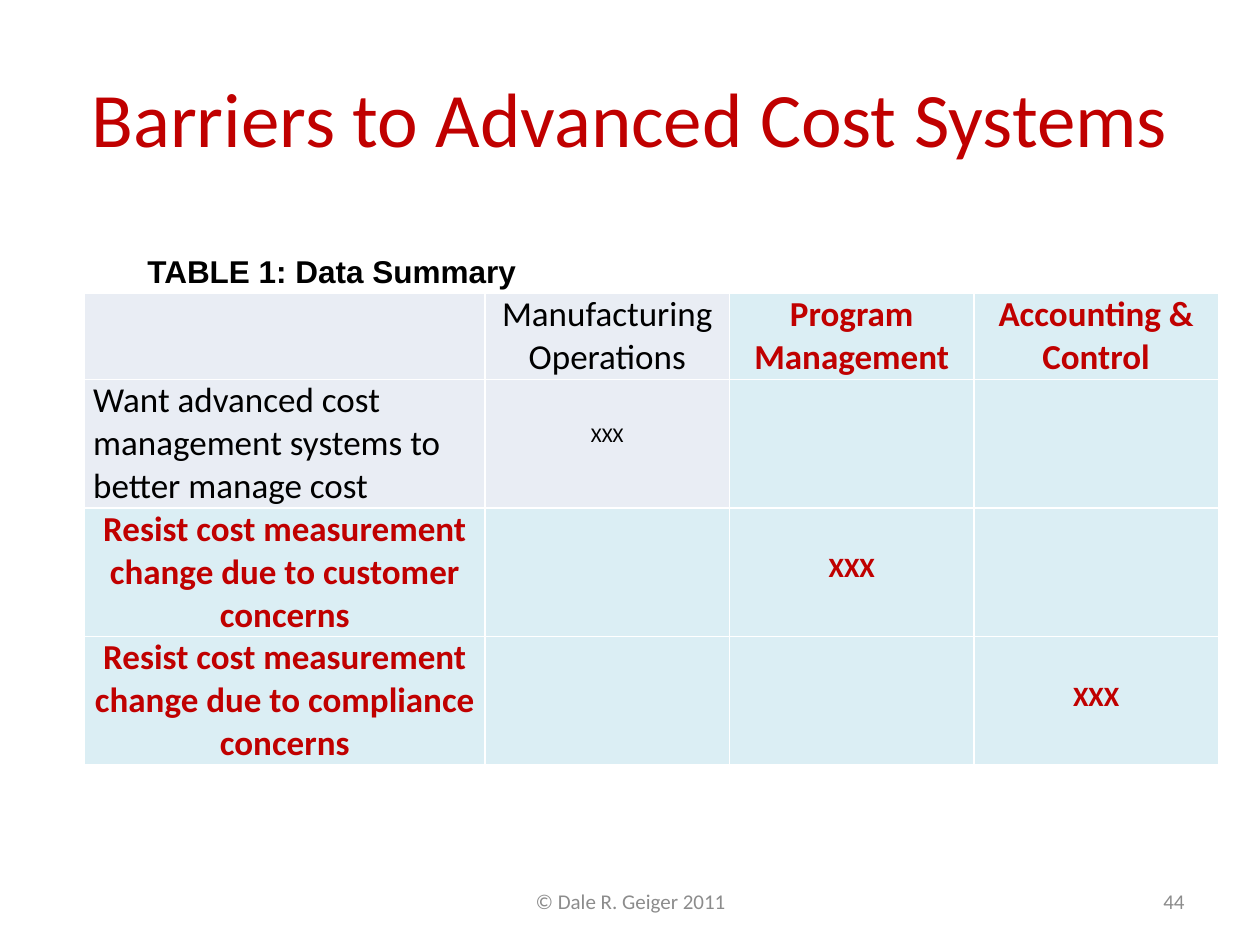
from dataclasses import dataclass

from lxml import etree
from pptx import Presentation
from pptx.dml.color import RGBColor
from pptx.enum.text import MSO_ANCHOR, PP_ALIGN
from pptx.oxml.ns import qn
from pptx.util import Inches, Pt

LEFT, CENTER, RIGHT = PP_ALIGN.LEFT, PP_ALIGN.CENTER, PP_ALIGN.RIGHT
TOP, MIDDLE = MSO_ANCHOR.TOP, MSO_ANCHOR.MIDDLE
RED, BLACK, GRAY, WHITE = "C00000", "000000", "8C8C8C", "FFFFFF"
LAVENDER, AQUA = "E9EDF4", "DBEEF4"
TITLE_ONLY = 5

LINE_HEIGHT = 0.34  # one 20 pt line, in inches
COLUMN_WIDTHS = [3.18] + 3 * [1.94]
ROW_LINES = [2, 3, 3, 3]


@dataclass(frozen=True)
class Style:
    size: float
    color: str = BLACK
    bold: bool = False
    align: PP_ALIGN = CENTER
    font: str = "Calibri"


@dataclass(frozen=True)
class Entry:
    row: int
    column: int
    text: str
    style: Style
    lines_above: int = 0


@dataclass(frozen=True)
class Label:
    text: str
    left: float
    top: float
    width: float
    height: float
    style: Style
    anchor: MSO_ANCHOR = MIDDLE
    margins: tuple[float, float] = (0.1, 0.05)
    wrap: bool = True


PLAIN = Style(20)
STRONG = Style(20, RED, bold=True)
MARK = Style(16, RED, bold=True)

ENTRIES = [
    Entry(0, 1, "Manufacturing Operations", PLAIN),
    Entry(0, 2, "Program Management", STRONG),
    Entry(0, 3, "Accounting & Control", STRONG),
    Entry(1, 0, "Want advanced cost management systems to better manage cost",
          Style(20, align=LEFT)),
    Entry(1, 1, "XXX", Style(12), lines_above=1),
    Entry(2, 0, "Resist cost measurement change due to customer concerns", STRONG),
    Entry(2, 2, "XXX", MARK, lines_above=1),
    Entry(3, 0, "Resist cost measurement change due to compliance concerns", STRONG),
    Entry(3, 3, "XXX", MARK, lines_above=1),
]

LABELS = [
    Label("TABLE 1: Data Summary", 1.17, 1.98, 2.95, 0.71,
          Style(18, bold=True, align=LEFT, font="Arial"), TOP, (0, 0.02), wrap=False),
    Label("© Dale R. Geiger 2011", 3.42, 6.95, 3.17, 0.4, Style(12, GRAY)),
    Label("44", 7.17, 6.95, 2.33, 0.4, Style(12, GRAY, align=RIGHT)),
]


def rgb(color: str) -> RGBColor:
    return RGBColor.from_string(color)


def write(text_frame, text: str, style: Style) -> None:
    paragraph = text_frame.paragraphs[0]
    paragraph.text = text
    paragraph.alignment = style.align
    font = paragraph.font
    font.name, font.size, font.bold = style.font, Pt(style.size), style.bold
    font.color.rgb = rgb(style.color)


def add_title(slide, text: str) -> None:
    title = slide.shapes.title
    title.left, title.top = Inches(0.5), Inches(0.3)
    title.width, title.height = Inches(9), Inches(1.25)
    title.text_frame.vertical_anchor = MIDDLE
    write(title.text_frame, text, Style(44, RED))


def add_label(slide, label: Label) -> None:
    box = slide.shapes.add_textbox(Inches(label.left), Inches(label.top),
                                   Inches(label.width), Inches(label.height))
    frame = box.text_frame
    frame.word_wrap = label.wrap
    frame.vertical_anchor = label.anchor
    side, end = (Inches(margin) for margin in label.margins)
    frame.margin_left = frame.margin_right = side
    frame.margin_top = frame.margin_bottom = end
    write(frame, label.text, label.style)


def add_borders(cell, color: str) -> None:
    properties = cell._tc.get_or_add_tcPr()
    for edge in ("a:lnL", "a:lnR", "a:lnT", "a:lnB"):
        line = etree.SubElement(properties, qn(edge), w=str(Pt(1)))
        fill = etree.SubElement(line, qn("a:solidFill"))
        etree.SubElement(fill, qn("a:srgbClr"), val=color)


def add_summary_table(slide) -> None:
    row_heights = [lines * LINE_HEIGHT for lines in ROW_LINES]
    table = slide.shapes.add_table(
        len(row_heights), len(COLUMN_WIDTHS), Inches(0.67), Inches(2.33),
        Inches(sum(COLUMN_WIDTHS)), Inches(sum(row_heights))).table
    table.first_row = table.horz_banding = False
    for column, width in zip(table.columns, COLUMN_WIDTHS):
        column.width = Inches(width)
    for row_index, (row, height) in enumerate(zip(table.rows, row_heights)):
        row.height = Inches(height)
        for column_index, cell in enumerate(row.cells):
            add_borders(cell, WHITE)
            cell.fill.solid()
            in_plain_block = row_index < 2 and column_index < 2
            cell.fill.fore_color.rgb = rgb(LAVENDER if in_plain_block else AQUA)
            cell.margin_left = cell.margin_right = Inches(0.07)
            cell.margin_top = cell.margin_bottom = 0
    for entry in ENTRIES:
        cell = table.cell(entry.row, entry.column)
        cell.margin_top = Inches(entry.lines_above * LINE_HEIGHT)
        write(cell.text_frame, entry.text, entry.style)


def main() -> None:
    presentation = Presentation()
    presentation.slide_width, presentation.slide_height = Inches(10), Inches(7.5)
    slide = presentation.slides.add_slide(presentation.slide_layouts[TITLE_ONLY])
    add_title(slide, "Barriers to Advanced Cost Systems")
    add_summary_table(slide)
    for label in LABELS:
        add_label(slide, label)
    presentation.save("out.pptx")


if __name__ == "__main__":
    main()
